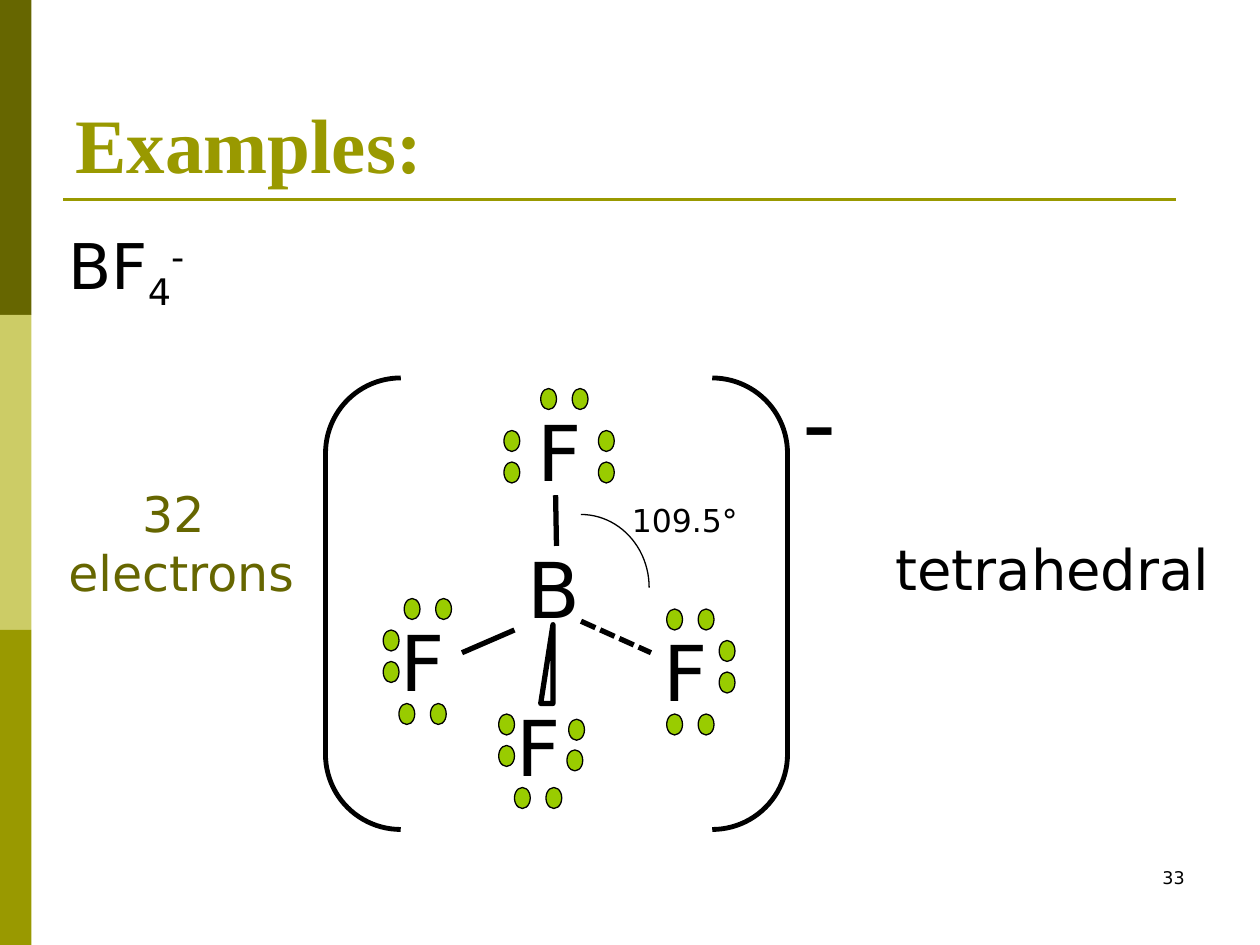
import pptx
import pptx.dml.color
import pptx.enum.dml
import pptx.enum.shapes
import pptx.enum.text
import pptx.oxml.ns
import pptx.util
from lxml import etree

Pt = pptx.util.Pt
SHAPE = pptx.enum.shapes.MSO_SHAPE
ALIGN = pptx.enum.text.PP_ALIGN
ANCHOR = pptx.enum.text.MSO_ANCHOR

COLORS = {
    "dark": "666600",
    "light": "CCCC66",
    "accent": "999900",
    "electron": "99CC00",
    "ink": "000000",
}
BODY_FONT = "DejaVu Sans"
PAIR_GAP = 18
ELECTRON_SIZE = (9, 12)

# Left and top of each atom label
ATOMS = [
    ("B", 294.5, 306),
    ("F", 372, 353.5),
    ("F", 222, 347.5),
    ("F", 300, 227.5),
    ("F", 288, 396),
]
# Left and top of the first electron in each lone pair
SIDE_BY_SIDE = [(309, 222), (381, 348), (381, 408), (231, 342), (228, 402), (294, 450)]
STACKED = [(288, 246), (342, 246), (219, 360), (411, 366), (285, 408)]
# The pair to the right of the lower fluorine stands slightly askew
ASKEW = [(325, 411), (324, 428.5)]


def rgb(name):
    return pptx.dml.color.RGBColor.from_string(COLORS[name])


def apply(target, values):
    for key, value in values.items():
        setattr(target, key, value)


def add_text(slide, box, runs, size, color="ink", align=ALIGN.LEFT,
             anchor=ANCHOR.TOP, before=0, **font):
    """Place one paragraph; runs are (text, baseline shift in percent)."""
    frame = slide.shapes.add_textbox(*map(Pt, box)).text_frame
    apply(frame, {"word_wrap": True, "vertical_anchor": anchor})
    paragraph = frame.paragraphs[0]
    apply(paragraph, {"alignment": align, "space_before": Pt(before)})
    for text, shift in runs:
        for number, line in enumerate(text.split("\n")):
            if number:
                paragraph.add_line_break()
            run = paragraph.add_run()
            run.text = line
            apply(run.font, {"name": BODY_FONT, "size": Pt(size), **font})
            run.font.color.rgb = rgb(color)
            if shift:
                run.font._element.set("baseline", str(shift * 1000))


def add_figure(slide, kind, box, fill=None, line=None, width=0.75):
    figure = slide.shapes.add_shape(kind, *map(Pt, box))
    figure.shadow.inherit = False
    if fill:
        figure.fill.solid()
        figure.fill.fore_color.rgb = rgb(fill)
    else:
        figure.fill.background()
    if line:
        figure.line.color.rgb = rgb(line)
        figure.line.width = Pt(width)
    else:
        figure.line.fill.background()
    return figure


def add_line(slide, start, end, color="ink", width=3, dash=None):
    line = slide.shapes.add_connector(
        pptx.enum.shapes.MSO_CONNECTOR.STRAIGHT, *map(Pt, start + end))
    line.line.color.rgb = rgb(color)
    apply(line.line, {"width": Pt(width), "dash_style": dash})
    etree.SubElement(line._element.spPr, pptx.oxml.ns.qn("a:effectLst"))


def add_electrons(slide, positions):
    for position in positions:
        add_figure(slide, SHAPE.OVAL, position + ELECTRON_SIZE, "electron", "ink")


def add_frame(slide):
    # Side bands and title rule
    for row, color in enumerate(("dark", "light", "accent")):
        add_figure(slide, SHAPE.RECTANGLE, (0, row * 180, 18, 180), color)
    add_line(slide, (36, 114), (672, 114), "accent", 1.5)

    # Title and slide number
    add_text(slide, (36, 21.5, 648, 90), [("Examples:", 0)], 44, "accent",
             anchor=ANCHOR.BOTTOM, name="Times New Roman", bold=True)
    add_text(slide, (516, 492, 168, 36), [("33", 0)], 10, align=ALIGN.RIGHT)


def add_captions(slide):
    add_text(slide, (32, 126, 108, 90), [("BF", 0), ("4", -25), ("-", 30)], 36, before=3)
    add_text(slide, (30, 273, 147, 75), [("32 \nelectrons", 0)], 28, "dark", ALIGN.CENTER)
    add_text(slide, (489, 302, 225, 46), [("tetrahedral", 0)], 32, align=ALIGN.CENTER)


def add_molecule(slide):
    # Atoms
    for symbol, left, top in ATOMS:
        add_text(slide, (left, top, 48, 60.5), [(symbol, 0)], 44)

    # Bonds: two in the plane, one behind it, one in front of it
    add_line(slide, (317.5, 283), (318, 312))
    add_line(slide, (294, 360), (264, 373))
    add_line(slide, (332, 355), (372, 373),
             dash=pptx.enum.dml.MSO_LINE.SQUARE_DOT)
    wedge = add_figure(slide, SHAPE.RIGHT_TRIANGLE, (309, 357, 7, 45), line="ink", width=3)
    wedge._element.spPr.xfrm.set("flipH", "1")

    # Lone pairs
    for left, top in SIDE_BY_SIDE:
        add_electrons(slide, [(left, top), (left + PAIR_GAP, top)])
    for left, top in STACKED:
        add_electrons(slide, [(left, top), (left, top + PAIR_GAP)])
    add_electrons(slide, ASKEW)

    # Bond angle
    add_figure(slide, SHAPE.ARC, (293, 294, 78, 83.5), line="ink")
    add_text(slide, (354, 283, 81, 29), [("109.5°", 0)], 18)

    # Brackets and charge
    brackets = add_figure(slide, SHAPE.DOUBLE_BRACKET, (186, 216, 264, 258),
                          line="ink", width=2.75)
    brackets.adjustments[0] = 1 / 6
    add_text(slide, (451.5, 204, 40, 72.5), [("-", 0)], 54)


def main():
    deck = pptx.Presentation()
    apply(deck, {"slide_width": Pt(720), "slide_height": Pt(540)})
    slide = deck.slides.add_slide(deck.slide_layouts[6])
    add_frame(slide)
    add_captions(slide)
    add_molecule(slide)
    deck.save("out.pptx")


if __name__ == "__main__":
    main()
